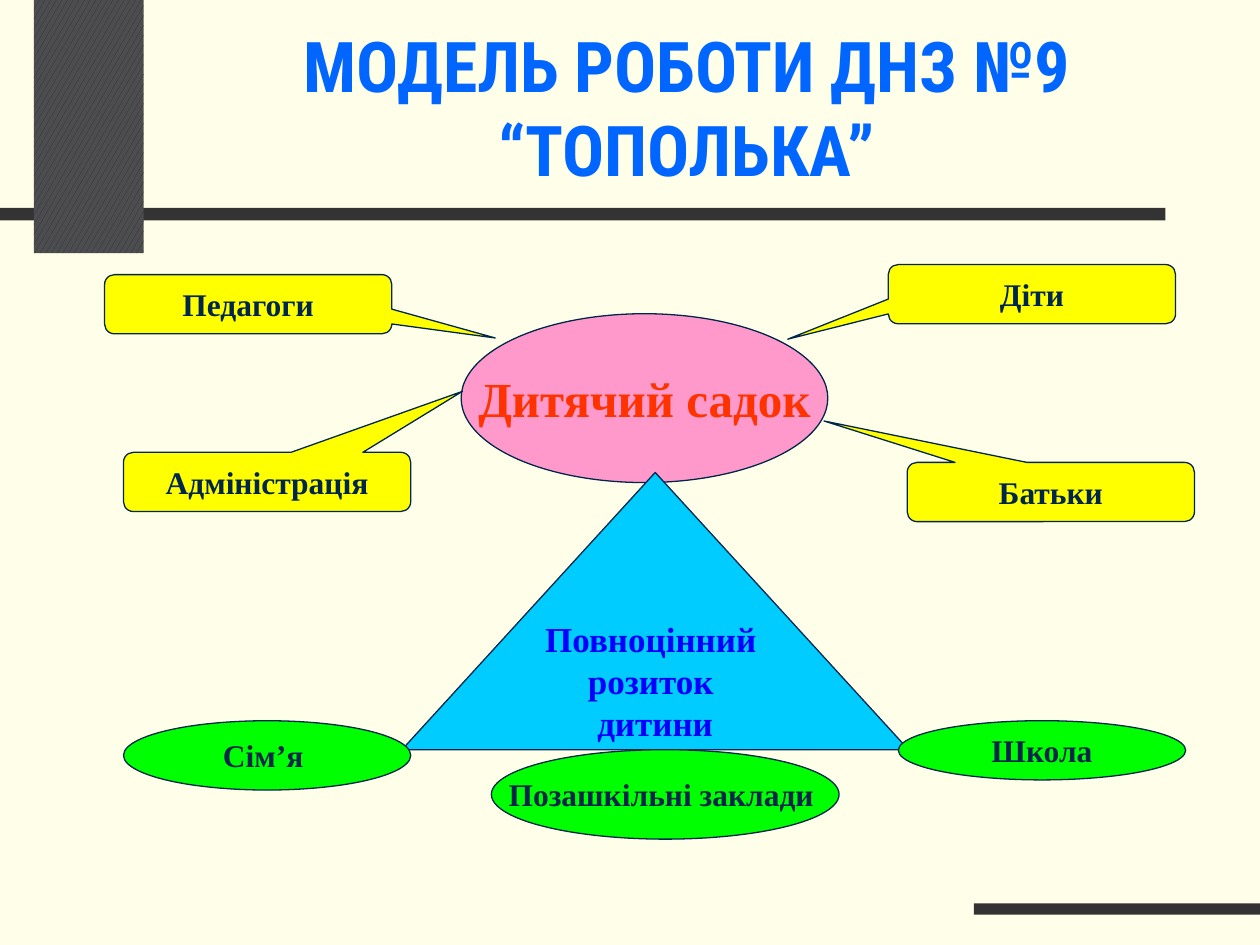
from dataclasses import dataclass

from pptx import Presentation
from pptx.dml.color import RGBColor
from pptx.enum.dml import MSO_PATTERN
from pptx.enum.shapes import MSO_SHAPE
from pptx.enum.text import MSO_ANCHOR, PP_ALIGN
from pptx.shapes.autoshape import Shape
from pptx.slide import Slide
from pptx.util import Inches, Pt

RECTANGLE = MSO_SHAPE.RECTANGLE
ELLIPSE = MSO_SHAPE.OVAL
TRIANGLE = MSO_SHAPE.ISOSCELES_TRIANGLE
CALLOUT = MSO_SHAPE.ROUNDED_RECTANGULAR_CALLOUT
CONFETTI = MSO_PATTERN.LARGE_CONFETTI
MIDDLE, BOTTOM = MSO_ANCHOR.MIDDLE, MSO_ANCHOR.BOTTOM
CENTER = PP_ALIGN.CENTER

COLORS = {
    "background": "FFFFE9",
    "bar": "333333",
    "pattern_front": "262D4C",
    "pattern_back": "4D4D4D",
    "title": "0066FF",
    "ink": "00264C",
    "pink": "FF99CC",
    "red": "FF3300",
    "yellow": "FFFF00",
    "cyan": "00CCFF",
    "blue": "0000FF",
    "green": "00FF00",
}
TITLE_FONT = "Roboto Condensed"
BODY_FONT = "Times New Roman"
PARTNER_WIDTH = 2.28
PARTNER_HEIGHT = 0.47


@dataclass
class Box:
    left: float
    top: float
    width: float
    height: float


@dataclass
class Node:
    text: str
    box: Box
    preset: MSO_SHAPE
    fill: str
    font_color: str = "ink"
    size: int = 18
    wrap: bool = False
    adjustments: tuple[float, ...] = ()


def participant(text: str, left: float, top: float, tip_x: float, tip_y: float) -> Node:
    """Callout whose tip is offset from its centre by fractions of its size."""
    box = Box(left, top, PARTNER_WIDTH, PARTNER_HEIGHT)
    return Node(text, box, CALLOUT, "yellow", wrap=True, adjustments=(tip_x, tip_y, 0.167))


BARS = [Box(0, 1.65, 9.25, 0.1), Box(7.73, 7.17, 2.27, 0.09)]
PATTERNED_BLOCK = Box(0.27, 0, 0.87, 2.01)

NODES = [
    Node("Дитячий садок", Box(3.66, 2.49, 2.91, 1.34), ELLIPSE, "pink", "red", 28),
    participant("Діти", 7.05, 2.1, -0.85, 0.76),
    participant("Батьки", 7.2, 3.67, -0.79, -1.2),
    participant("Адміністрація", 0.98, 3.59, 0.68, -1.53),
    participant("Педагоги", 0.83, 2.18, 0.86, 0.57),
    Node("Повноцінний \nрозиток \nдитини", Box(3.19, 3.75, 4.02, 2.2),
         TRIANGLE, "cyan", "blue", 20),
    Node("Сім’я ", Box(0.98, 5.72, PARTNER_WIDTH, 0.55), ELLIPSE, "green"),
    Node("Школа", Box(7.13, 5.72, PARTNER_WIDTH, PARTNER_HEIGHT), ELLIPSE, "green"),
    Node("Позашкільні заклади ", Box(3.9, 5.95, 2.76, 0.71), ELLIPSE, "green"),
]


def color(name: str) -> RGBColor:
    return RGBColor.from_string(COLORS[name])


def edges(box: Box) -> tuple[Inches, ...]:
    return tuple(Inches(v) for v in (box.left, box.top, box.width, box.height))


def add_preset(slide: Slide, preset: MSO_SHAPE, box: Box) -> Shape:
    shape = slide.shapes.add_shape(preset, *edges(box))
    shape.shadow.inherit = False
    return shape


def write_text(shape: Shape, text: str, font_name: str, size: int,
               font_color: str, anchor: MSO_ANCHOR, wrap: bool) -> None:
    frame = shape.text_frame
    frame.text = text
    frame.word_wrap = wrap
    frame.vertical_anchor = anchor
    for paragraph in frame.paragraphs:
        paragraph.alignment = CENTER
        font = paragraph.font
        font.name = font_name
        font.size = Pt(size)
        font.bold = True
        font.color.rgb = color(font_color)


def add_decoration(slide: Slide) -> None:
    for box in BARS:
        bar = add_preset(slide, RECTANGLE, box)
        bar.fill.solid()
        bar.fill.fore_color.rgb = color("bar")
        bar.line.fill.background()
    block = add_preset(slide, RECTANGLE, PATTERNED_BLOCK)
    block.fill.patterned()
    block.fill.pattern = CONFETTI
    block.fill.fore_color.rgb = color("pattern_front")
    block.fill.back_color.rgb = color("pattern_back")
    block.line.fill.background()


def add_title(slide: Slide) -> None:
    title = slide.shapes.add_textbox(*edges(Box(1.2, 0.31, 8.5, 1.25)))
    write_text(title, "МОДЕЛЬ РОБОТИ ДНЗ №9 “ТОПОЛЬКА”", TITLE_FONT, 40, "title", BOTTOM, True)


def add_node(slide: Slide, node: Node) -> None:
    shape = add_preset(slide, node.preset, node.box)
    for index, value in enumerate(node.adjustments):
        shape.adjustments[index] = value
    shape.fill.solid()
    shape.fill.fore_color.rgb = color(node.fill)
    shape.line.color.rgb = color("ink")
    shape.line.width = Pt(0.75)
    write_text(shape, node.text, BODY_FONT, node.size, node.font_color, MIDDLE, node.wrap)


def main() -> None:
    presentation = Presentation()
    presentation.slide_width = Inches(10)
    presentation.slide_height = Inches(7.5)
    slide = presentation.slides.add_slide(presentation.slide_layouts[6])
    slide.background.fill.solid()
    slide.background.fill.fore_color.rgb = color("background")
    add_decoration(slide)
    add_title(slide)
    for node in NODES:
        add_node(slide, node)
    presentation.save("out.pptx")


if __name__ == "__main__":
    main()
